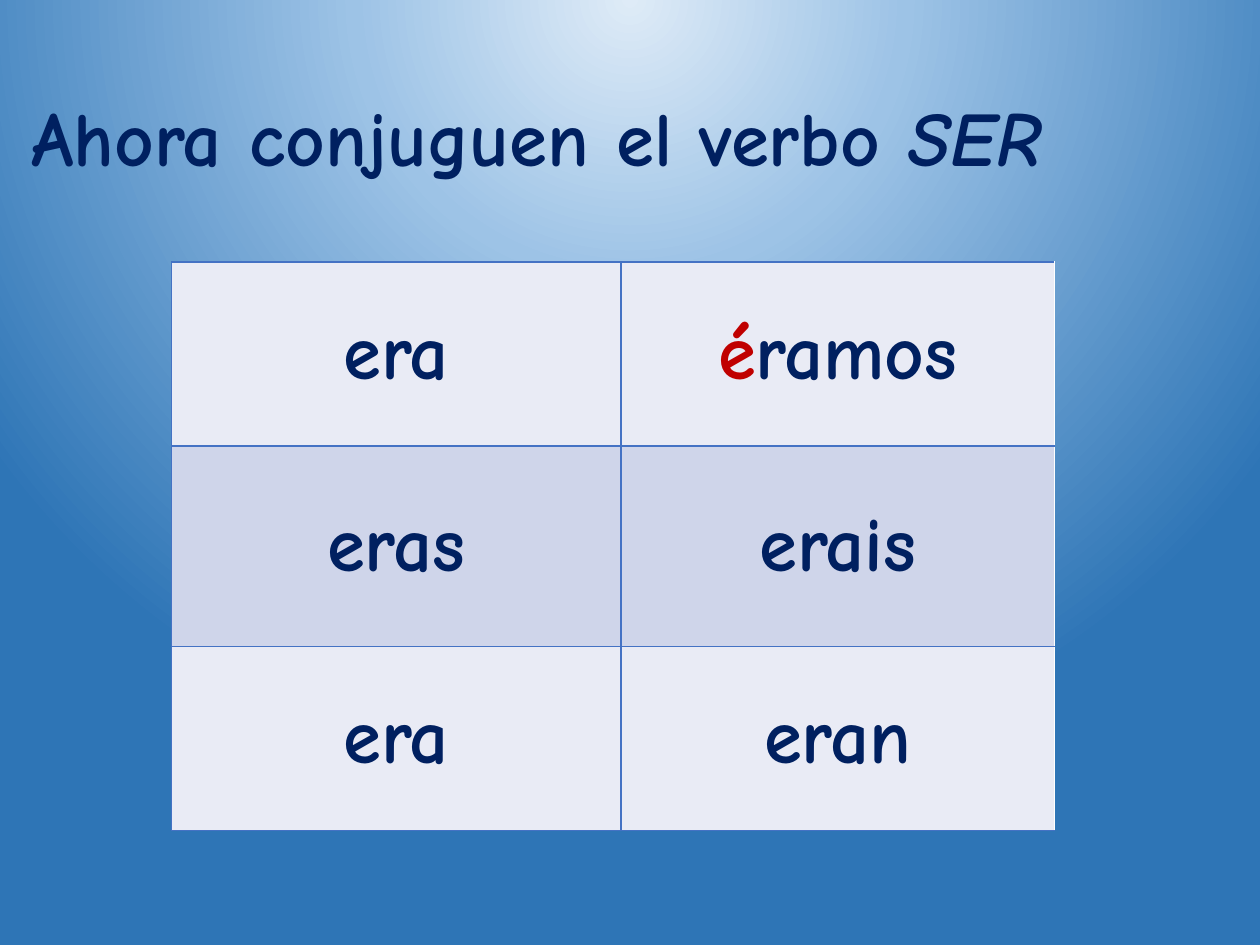
from pptx import Presentation
from pptx.dml.color import RGBColor
from pptx.enum.text import MSO_ANCHOR, PP_ALIGN
from pptx.oxml import parse_xml
from pptx.oxml.ns import nsdecls
from pptx.util import Inches, Pt

COLORS = {
    "sky_light": "DEEBF7", "sky_mid": "9DC3E6", "sky_deep": "2E75B6",
    "text": "002060", "accent": "C00000", "border": "4472C4",
    "row_light": "E9EBF5", "row_dark": "CFD5EA",
}
FONT = "Comic Neue"
COL_WIDTHS = (3.57, 3.44)
ROW_HEIGHTS = (1.46, 1.59, 1.46)
# Each cell is a list of (text, color name) runs.
CONJUGATION = [
    [[("era", "text")], [("é", "accent"), ("ramos", "text")]],
    [[("eras", "text")], [("erais", "text")]],
    [[("era", "text")], [("eran", "text")]],
]


def rgb(name):
    return RGBColor.from_string(COLORS[name])


def set_background(s):
    """Radial glow centred above the top edge of the slide."""
    stops = "".join(
        f'<a:gs pos="{pos * 1000}"><a:srgbClr val="{COLORS[name]}"/></a:gs>'
        for pos, name in ((0, "sky_light"), (35, "sky_mid"), (100, "sky_deep")))
    s.element.cSld.insert(0, parse_xml(
        f'<p:bg {nsdecls("p", "a")}><p:bgPr><a:gradFill rotWithShape="1">'
        f'<a:gsLst>{stops}</a:gsLst><a:path path="circle">'
        '<a:fillToRect l="50000" t="-80000" r="50000" b="180000"/></a:path>'
        '</a:gradFill><a:effectLst/></p:bgPr></p:bg>'))


def style_paragraph(p):
    p.font.name, p.font.size, p.font.bold = FONT, Pt(44), True
    p.font.color.rgb = rgb("text")


def add_run(p, text, color="text", italic=None):
    r = p.add_run()
    r.text = text
    r.font.name, r.font.size, r.font.bold = FONT, Pt(44), True
    r.font.italic = italic
    r.font.color.rgb = rgb(color)


def add_title(s):
    box = s.shapes.add_textbox(Inches(0.15), Inches(0.66), Inches(9.76), Inches(0.84))
    tf = box.text_frame
    tf.word_wrap = True
    p = tf.paragraphs[0]
    style_paragraph(p)
    add_run(p, "Ahora conjuguen el verbo ")
    add_run(p, "SER", italic=True)


def add_borders(cell, sides):
    for side in sides:
        cell._tc.get_or_add_tcPr().append(parse_xml(
            f'<a:ln{side} {nsdecls("a")} w="{Pt(1)}"><a:solidFill>'
            f'<a:srgbClr val="{COLORS["border"]}"/></a:solidFill></a:ln{side}>'))


def fill_cell(cell, runs, fill, sides):
    add_borders(cell, sides)
    cell.fill.solid()
    cell.fill.fore_color.rgb = rgb(fill)
    cell.vertical_anchor = MSO_ANCHOR.MIDDLE
    p = cell.text_frame.paragraphs[0]
    p.alignment = PP_ALIGN.CENTER
    style_paragraph(p)
    for text, color in runs:
        add_run(p, text, color)


def add_conjugation_table(s):
    table = s.shapes.add_table(
        len(ROW_HEIGHTS), len(COL_WIDTHS), Inches(1.36), Inches(2.08),
        Inches(sum(COL_WIDTHS)), Inches(sum(ROW_HEIGHTS))).table
    table.first_row = table.horz_banding = False
    for col, width in zip(table.columns, COL_WIDTHS):
        col.width = Inches(width)
    for i, (row, height) in enumerate(zip(table.rows, ROW_HEIGHTS)):
        row.height = Inches(height)
        fill = "row_dark" if i % 2 else "row_light"
        for cell, runs, sides in zip(row.cells, CONJUGATION[i], ("LRTB", "LTB")):
            fill_cell(cell, runs, fill, sides)


def main():
    prs = Presentation()
    prs.slide_width, prs.slide_height = Inches(10), Inches(7.5)
    s = prs.slides.add_slide(prs.slide_layouts[6])
    set_background(s)
    add_title(s)
    add_conjugation_table(s)
    prs.save("out.pptx")


if __name__ == "__main__":
    main()
